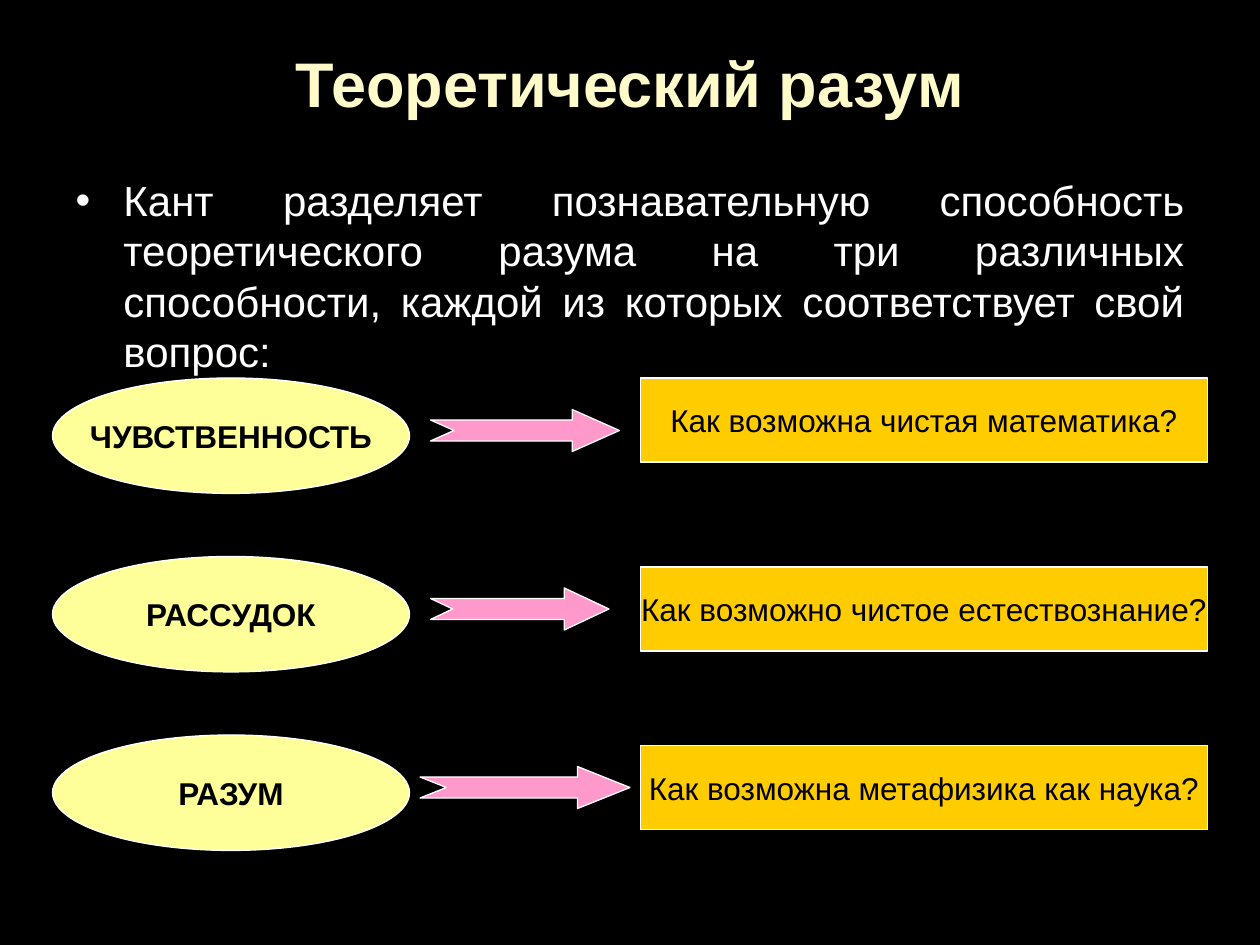
from dataclasses import dataclass

from lxml import etree
from pptx import Presentation
from pptx.dml.color import RGBColor
from pptx.enum.shapes import MSO_SHAPE
from pptx.enum.text import MSO_ANCHOR, MSO_AUTO_SIZE, PP_ALIGN
from pptx.oxml.ns import qn
from pptx.util import Inches, Pt

OVAL = MSO_SHAPE.OVAL
RECT = MSO_SHAPE.RECTANGLE
ARROW = MSO_SHAPE.NOTCHED_RIGHT_ARROW
MIDDLE, TOP = MSO_ANCHOR.MIDDLE, MSO_ANCHOR.TOP
CENTER, JUSTIFY = PP_ALIGN.CENTER, PP_ALIGN.JUSTIFY
NO_FIT = MSO_AUTO_SIZE.NONE

# Grid of 120 columns by 90 rows on a 10 x 7.5 inch slide
CELL = Inches(1) / 12


@dataclass
class Theme:
    font: str = "Arial"
    back: str = "000000"
    title: str = "FEFAC9"
    body: str = "FFFFFF"
    line: str = "FFFFFF"
    label: str = "000000"
    oval: str = "FFFF99"
    arrow: str = "FF99CC"
    box: str = "FFCC00"
    title_size: int = 36
    body_size: int = 24
    label_size: int = 18
    line_size: float = 0.75


def rgb(code):
    return RGBColor.from_string(code)


class Board:
    def __init__(self, deck, theme):
        self.theme = theme
        self.slide = deck.slides.add_slide(deck.slide_layouts[1])
        fill = self.slide.background.fill
        fill.solid()
        fill.fore_color.rgb = rgb(theme.back)

    def area(self, col, row, wide, high):
        return [round(n * CELL) for n in (col, row, wide, high)]

    def move(self, shape, *cells):
        shape.left, shape.top, shape.width, shape.height = self.area(*cells)

    def set_text(self, shape, text, size, color, bold=False,
                 align=CENTER, anchor=MIDDLE, wrap=True):
        frame = shape.text_frame
        frame.text = text
        frame.word_wrap = wrap
        frame.auto_size = NO_FIT
        frame.vertical_anchor = anchor
        para = frame.paragraphs[0]
        para.alignment = align
        font = para.runs[0].font
        font.name, font.size, font.bold = self.theme.font, Pt(size), bold
        font.color.rgb = rgb(color)
        return para

    def title(self, text, *cells):
        shape = self.slide.shapes.title
        self.move(shape, *cells)
        self.set_text(shape, text, self.theme.title_size, self.theme.title,
                      bold=True)

    def body(self, text, *cells):
        shape = self.slide.placeholders[1]
        self.move(shape, *cells)
        para = self.set_text(shape, text, self.theme.body_size,
                             self.theme.body, align=JUSTIFY, anchor=TOP)
        # Hanging bullet
        props = para._p.get_or_add_pPr()
        props.set("marL", str(Inches(0.38)))
        props.set("indent", str(-Inches(0.38)))
        etree.SubElement(props, qn("a:buChar")).set("char", "•")

    def shape(self, kind, fill, *cells):
        shape = self.slide.shapes.add_shape(kind, *self.area(*cells))
        shape.shadow.inherit = False
        shape.fill.solid()
        shape.fill.fore_color.rgb = rgb(fill)
        shape.line.color.rgb = rgb(self.theme.line)
        shape.line.width = Pt(self.theme.line_size)
        return shape

    def label(self, kind, fill, text, *cells, bold=False):
        shape = self.shape(kind, fill, *cells)
        self.set_text(shape, text, self.theme.label_size, self.theme.label,
                      bold, wrap=False)

    def arrow(self, col, row, wide, high=4):
        shape = self.shape(ARROW, self.theme.arrow, col, row, wide, high)
        # The head takes a quarter of the length
        shape.adjustments[0] = 0.5
        shape.adjustments[1] = wide / high / 4


# Faculty, its question, arrow column and width, box row
PAIRS = [
    ("ЧУВСТВЕННОСТЬ", "Как возможна чистая математика?", 41, 18, 36),
    ("РАССУДОК", "Как возможно чистое естествознание?", 41, 17, 54),
    ("РАЗУМ", "Как возможна метафизика как наука?", 40, 20, 71),
]
FIRST, STEP = 36, 17


def main():
    deck = Presentation()
    deck.slide_width, deck.slide_height = Inches(10), Inches(7.5)
    theme = Theme()
    board = Board(deck, theme)

    # Heading and introduction
    board.title("Теоретический разум", 6, 3.6, 108, 8.4)
    board.body("Кант разделяет познавательную способность теоретического "
               "разума на три различных способности, каждой из которых "
               "соответствует свой вопрос:", 6, 16, 108, 59.4)

    # Each faculty points to its question
    for i, (name, query, col, wide, row) in enumerate(PAIRS):
        top = FIRST + i * STEP
        board.label(OVAL, theme.oval, name, 5, top, 34, 11, bold=True)
        board.arrow(col, top + 3, wide)
        board.label(RECT, theme.box, query, 61, row, 54, 8)

    deck.save("out.pptx")


if __name__ == "__main__":
    main()
